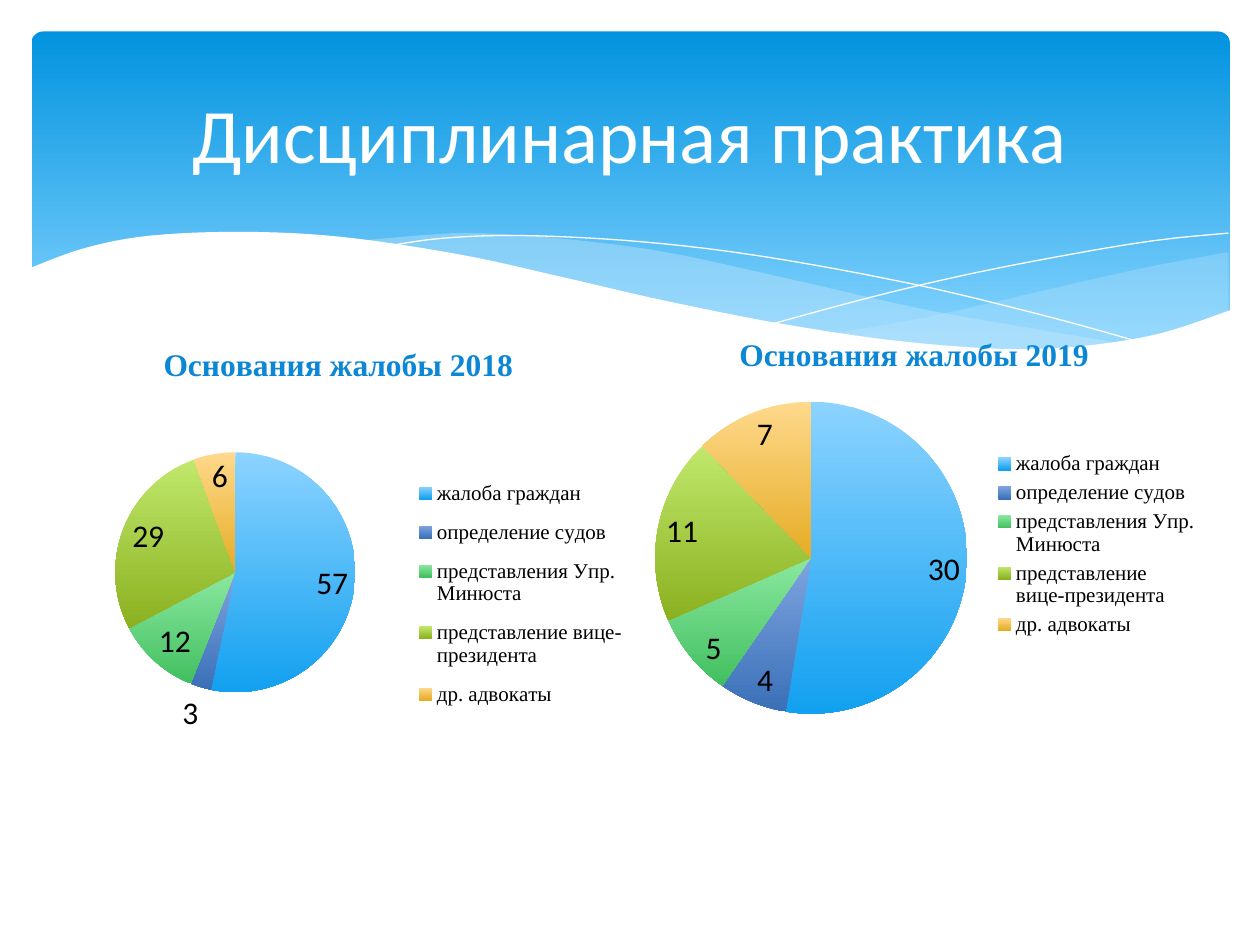
from lxml.etree import SubElement
from pptx import Presentation
from pptx.chart.data import CategoryChartData
from pptx.dml.color import RGBColor
from pptx.enum.chart import XL_CHART_TYPE as CT, XL_LABEL_POSITION as LP, XL_LEGEND_POSITION as LG
from pptx.enum.shapes import MSO_SHAPE
from pptx.enum.text import MSO_ANCHOR, PP_ALIGN
from pptx.oxml import parse_xml
from pptx.oxml.ns import nsdecls, qn
from pptx.util import Inches, Pt

COLORS = {"sky": "0293E0", "haze": "83D3FE", "ribbon": "C6E7FC",
          "white": "FFFFFF", "black": "000000", "heading": "0B87D6"}
SLICES = [("8CD3FF", "12A0F0"), ("7FA4E0", "3A70B8"), ("8AE89F", "42BF60"),
          ("C0E86B", "8BB020"), ("FFD98C", "E5AC25")]
CATEGORIES = ["жалоба граждан", "определение судов", "представления Упр. Минюста",
              "представление вице-президента", "др. адвокаты"]

RIBBONS = [
    (29, [[(100, 20), (94.3, 30), (88, 43), (79.4, 62), (74.1, 73), (66.9, 85)],
          [(66.9, 85), (74.4, 94), (81.9, 98), (88.2, 95), (94.3, 85), (100, 67)]]),
    (40, [[(27.5, 11), (33.6, 6), (37.4, 5), (43.9, 9), (52.9, 20), (63.6, 42),
           (75.4, 67), (91.4, 93)],
          [(91.4, 93), (83.5, 98), (76.1, 96), (65.8, 84), (53.2, 60), (44.6, 42),
           (35.5, 23), (27.5, 11)]]),
]
STRANDS = [
    [(29.9, 15), (34.5, 9), (41.2, 7), (51.1, 12), (61.4, 24), (73.9, 46),
     (84.8, 71), (92.8, 92)],
    [(61.9, 77), (70.5, 55), (79.1, 36), (88.5, 19), (94.6, 10), (100, 5)],
]
SHORE = [(100.2, 66), (93.2, 87), (84, 97), (73.8, 92), (63.3, 78), (53.1, 59),
         (44.4, 40), (35.8, 22), (25.9, 8), (17.7, 4), (9.9, 7), (4.4, 17), (-0.2, 33)]
SHORE_BASE = [(-0.2, 149), (100.2, 149)]


def rgb(name):
    """Return the colour for a palette key or a hex string."""
    return RGBColor.from_string(COLORS.get(name, name))


def smooth(points, steps=6):
    """Return a Catmull-Rom curve through the points."""
    ends = [points[0], *points, points[-1]]
    curve = [points[0]]
    for a, b, c, d in zip(ends, ends[1:], ends[2:], ends[3:]):
        for t in (i / steps for i in range(1, steps + 1)):
            curve.append(tuple(
                (2 * q + (r - p) * t + (2 * p - 5 * q + 4 * r - s) * t ** 2
                 + (3 * q - p - 3 * r + s) * t ** 3) / 2
                for p, q, r, s in zip(a, b, c, d)))
    return curve


def gradient(fill, top, bottom, end=1.0):
    """Fill from top to bottom with two colours."""
    fill.gradient()
    fill.gradient_angle = 270
    for stop, color, position in zip(fill.gradient_stops, (top, bottom), (0, end)):
        stop.color.rgb = rgb(color)
        stop.position = position


def add_path(slide, box, points, closed=True):
    """Draw an outline whose points are percentages of the box."""
    x, y, w, h = box
    spots = [(Inches(x + w * u / 100), Inches(y + h * v / 100)) for u, v in points]
    builder = slide.shapes.build_freeform(*spots[0])
    builder.add_line_segments(spots[1:], close=closed)
    sp = builder.convert_to_shape()
    sp.shadow.inherit = False
    return sp


def fill_path(sp, color, opacity=100):
    """Give an outline a plain fill without a border."""
    sp.fill.solid()
    sp.fill.fore_color.rgb = rgb(color)
    sp.line.fill.background()
    if opacity < 100:
        color_el = sp.fill._xPr.find(".//" + qn("a:srgbClr"))
        SubElement(color_el, qn("a:alpha"), val=str(opacity * 1000))


def add_banner(slide, box):
    """Draw the rounded gradient banner."""
    sp = slide.shapes.add_shape(MSO_SHAPE.ROUNDED_RECTANGLE, *map(Inches, box))
    sp.adjustments[0] = 0.034
    sp.shadow.inherit = False
    sp.line.fill.background()
    gradient(sp.fill, "sky", "haze", 0.9)


def add_waves(slide, box):
    """Draw the ribbons, strands and white shore across the box."""
    for opacity, edges in RIBBONS:
        points = [p for edge in edges for p in smooth(edge)]
        fill_path(add_path(slide, box, points), "ribbon", opacity)
    for strand in STRANDS:
        sp = add_path(slide, box, smooth(strand), closed=False)
        sp.fill.background()
        sp.line.color.rgb = rgb("white")
        sp.line.width = Pt(0)
    fill_path(add_path(slide, box, smooth(SHORE) + SHORE_BASE), "white")


def add_title(slide, box, text):
    """Place the title placeholder in front of the banner."""
    sp = slide.shapes.title
    sp.left, sp.top, sp.width, sp.height = map(Inches, box)
    slide.shapes._spTree.append(sp._element)
    tf = sp.text_frame
    tf.text = text
    tf.vertical_anchor = MSO_ANCHOR.MIDDLE
    p = tf.paragraphs[0]
    p.alignment = PP_ALIGN.CENTER
    set_font(p.runs[0].font, 44, "Calibri", "white")


def set_font(font, size, name, color, bold=None):
    """Set size, face, colour and weight."""
    font.size, font.name, font.bold = Pt(size), name, bold
    font.color.rgb = rgb(color)


def manual_layout(shares, inner=False):
    """Return a chart layout from shares of the chart's box."""
    target = '<c:layoutTarget val="inner"/>' if inner else ""
    modes = '<c:xMode val="edge"/><c:yMode val="edge"/>'
    sizes = "".join(f'<c:{k} val="{v}"/>' for k, v in zip("xywh", shares))
    return parse_xml(f'<c:layout {nsdecls("c")}><c:manualLayout>{target}{modes}{sizes}'
                     '</c:manualLayout></c:layout>')


def add_pie(slide, box, title, values, pie_box, legend_box):
    """Add a pie with title, value labels and a legend on the right."""
    data = CategoryChartData()
    data.categories = CATEGORIES
    data.add_series(title, values)
    chart = slide.shapes.add_chart(CT.PIE, *map(Inches, box), data).chart
    set_font(chart.font, 18, "Calibri", "black")
    chart.has_title = True
    tf = chart.chart_title.text_frame
    tf.text = title
    set_font(tf.paragraphs[0].runs[0].font, 18, "Times New Roman", "heading", True)

    plot = chart.plots[0]
    plot.vary_by_categories = True
    plot.has_data_labels = True
    plot.data_labels.show_value = True
    plot.data_labels.show_percentage = False
    plot.data_labels.position = LP.BEST_FIT
    for i, (top, bottom) in enumerate(SLICES):
        gradient(plot.series[0].points[i].format.fill, top, bottom)

    chart.has_legend = True
    legend = chart.legend
    legend.position = LG.RIGHT
    legend.include_in_layout = False
    set_font(legend.font, 12, "Times New Roman", "black")
    area = chart._chartSpace.find(".//" + qn("c:plotArea"))
    for parent in (area, legend._element):
        for old in parent.findall(qn("c:layout")):
            parent.remove(old)
    area.insert(0, manual_layout(pie_box, inner=True))
    legend._element.find(qn("c:legendPos")).addnext(manual_layout(legend_box))


def main():
    """Build the slide and save it."""
    prs = Presentation()
    prs.slide_width, prs.slide_height = Inches(10), Inches(7.5)
    slide = prs.slides.add_slide(prs.slide_layouts[5])
    add_banner(slide, (0.25, 0.25, 9.51, 2.7))
    add_waves(slide, (0.25, 1.8, 9.5, 1))
    add_title(slide, (0.5, 0.37, 9, 1.37), "Дисциплинарная практика")
    add_pie(slide, (0.35, 2.57, 4.67, 3.4), "Основания жалобы 2018", (57, 3, 12, 29, 6),
            (0.12, 0.3, 0.41, 0.56), (0.63, 0.33, 0.36, 0.6))
    add_pie(slide, (4.92, 2.49, 4.67, 3.62), "Основания жалобы 2019", (30, 4, 5, 11, 7),
            (0.06, 0.19, 0.53, 0.69), (0.64, 0.29, 0.34, 0.43))
    prs.save("out.pptx")


if __name__ == "__main__":
    main()
